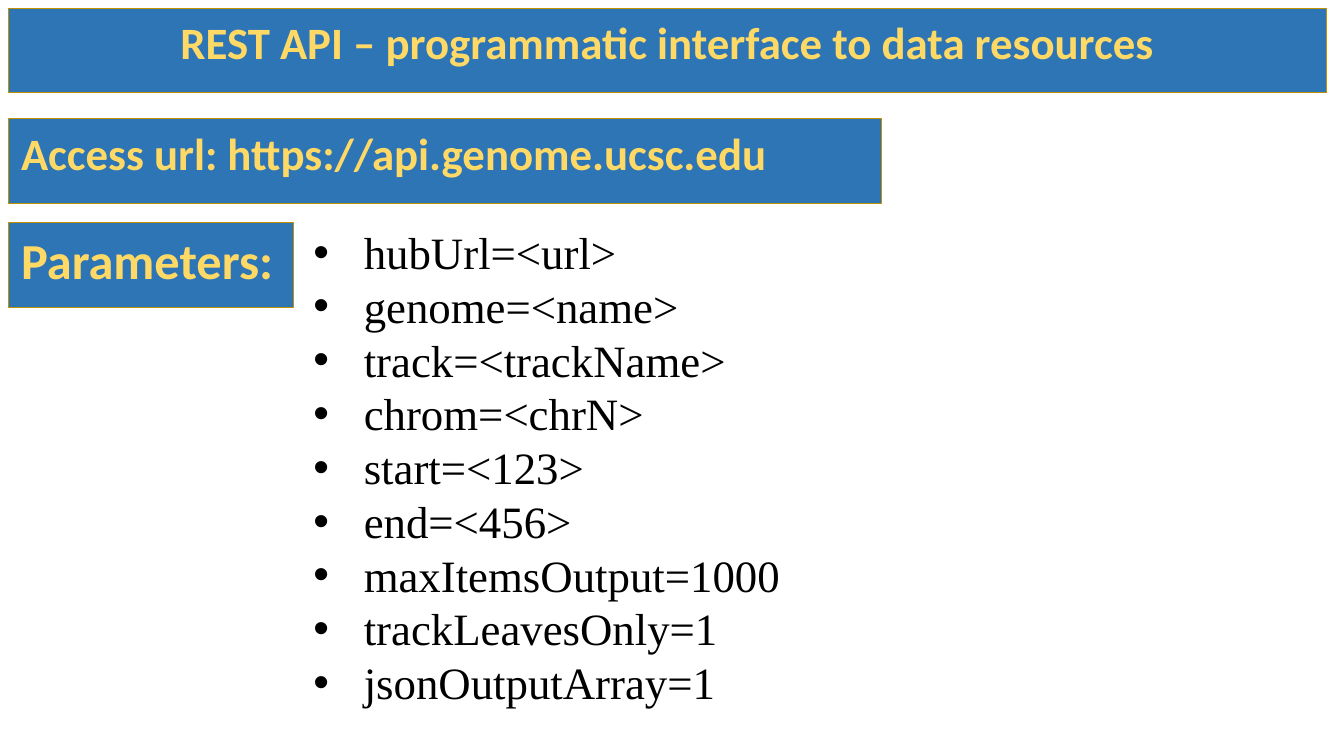
import pptx
import pptx.dml.color
import pptx.enum.shapes
import pptx.enum.text
import pptx.oxml.ns
import pptx.util
from lxml import etree

Inches = pptx.util.Inches
Pt = pptx.util.Pt
Align = pptx.enum.text.PP_ALIGN

PARAMETERS = [
    "hubUrl=<url>",
    "genome=<name>",
    "track=<trackName>",
    "chrom=<chrN>",
    "start=<123>",
    "end=<456>",
    "maxItemsOutput=1000",
    "trackLeavesOnly=1",
    "jsonOutputArray=1",
]


def color(value):
    return pptx.dml.color.RGBColor.from_string(value)


def add_bullet(paragraph, indent):
    """Give the paragraph a round bullet with a hanging indent."""
    properties = paragraph._p.get_or_add_pPr()
    properties.set("marL", str(indent))
    properties.set("indent", str(-indent))
    font = etree.SubElement(properties, pptx.oxml.ns.qn("a:buFont"))
    font.set("typeface", "Arial")
    bullet = etree.SubElement(properties, pptx.oxml.ns.qn("a:buChar"))
    bullet.set("char", "•")


def write(paragraph, text, font="Calibri", size=32, fill="000000", bold=False,
          align=Align.LEFT):
    paragraph.alignment = align
    run = paragraph.add_run()
    run.text = text
    run.font.name = font
    run.font.size = Pt(size)
    run.font.bold = bold
    run.font.color.rgb = color(fill)


class ApiSlide:
    banner_fill = "2E75B6"
    banner_line = "BF9000"
    banner_text = "FFD966"
    banner_left = Inches(0.08)
    banner_height = Inches(0.84)
    banner_inset = Inches(0.13)

    def __init__(self, presentation):
        self.slide = presentation.slides.add_slide(presentation.slide_layouts[6])

    def banner(self, text, top, width, size=32, align=Align.LEFT):
        shape = self.slide.shapes.add_shape(
            pptx.enum.shapes.MSO_SHAPE.RECTANGLE,
            self.banner_left, Inches(top), Inches(width), self.banner_height)
        shape.shadow.inherit = False
        shape.fill.solid()
        shape.fill.fore_color.rgb = color(self.banner_fill)
        shape.line.color.rgb = color(self.banner_line)
        shape.line.width = Pt(0.75)
        frame = shape.text_frame
        frame.word_wrap = True
        frame.vertical_anchor = pptx.enum.text.MSO_ANCHOR.TOP
        frame.margin_left = frame.margin_right = self.banner_inset
        frame.margin_top = frame.margin_bottom = self.banner_inset
        paragraph = frame.paragraphs[0]
        paragraph.line_spacing = 0.9
        paragraph.space_after = Pt(21.3)
        write(paragraph, text, size=size, fill=self.banner_text, bold=True,
              align=align)

    def bullet_list(self, items, left, top, width, height):
        box = self.slide.shapes.add_textbox(
            Inches(left), Inches(top), Inches(width), Inches(height))
        frame = box.text_frame
        frame.word_wrap = True
        frame.auto_size = pptx.enum.text.MSO_AUTO_SIZE.SHAPE_TO_FIT_TEXT
        for index, item in enumerate(items):
            paragraph = frame.add_paragraph() if index else frame.paragraphs[0]
            add_bullet(paragraph, Inches(0.5))
            write(paragraph, item, font="Times New Roman")


def main():
    presentation = pptx.Presentation()
    presentation.slide_width = Inches(13.33)
    presentation.slide_height = Inches(7.5)
    slide = ApiSlide(presentation)
    slide.banner("Access url: https://api.genome.ucsc.edu", top=1.18, width=8.66)
    slide.bullet_list(PARAMETERS, left=3.01, top=2.18, width=7.56, height=4.95)
    slide.banner("Parameters:", top=2.21, width=2.83, size=36)
    slide.banner("REST API – programmatic interface to data resources",
                 top=0.08, width=13.08, align=Align.CENTER)
    presentation.save("out.pptx")


if __name__ == "__main__":
    main()
